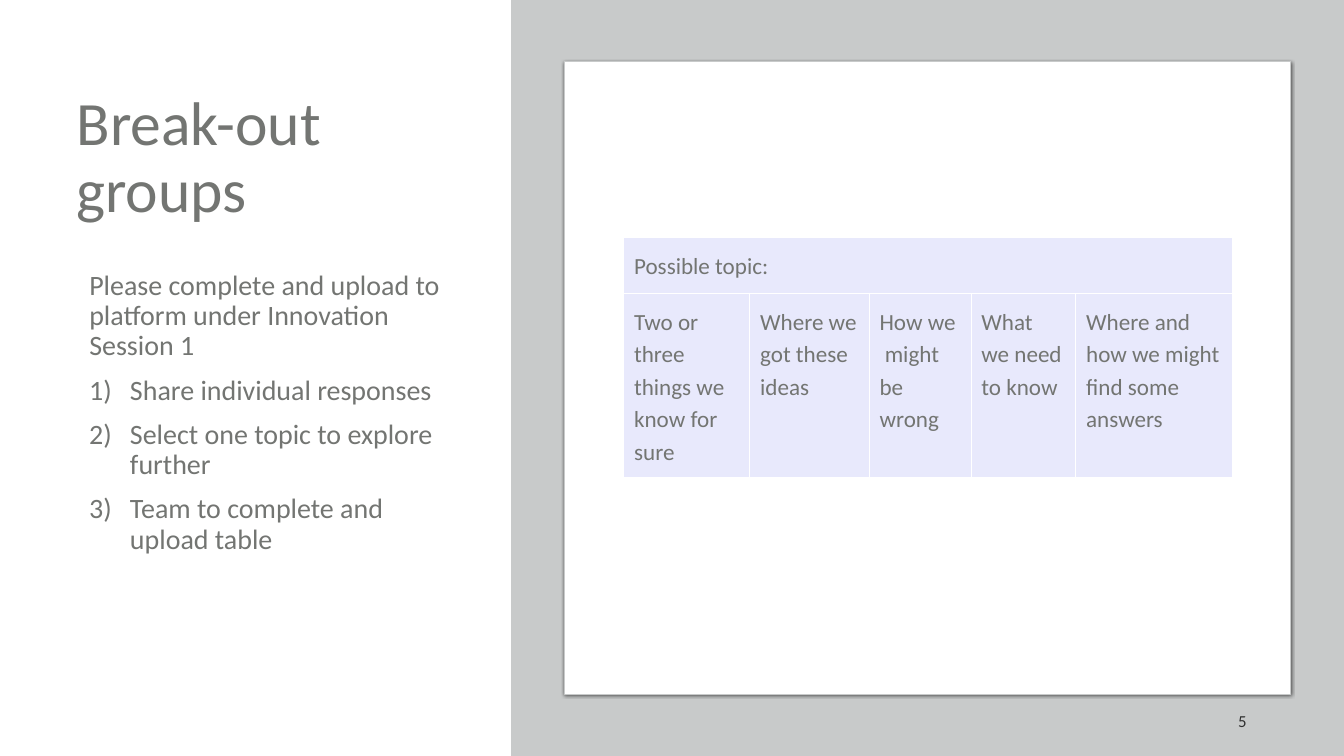
from lxml import etree
from pptx import Presentation
from pptx.dml.color import RGBColor
from pptx.enum.shapes import MSO_SHAPE as Shape
from pptx.enum.text import MSO_ANCHOR as Anchor, PP_ALIGN as Align
from pptx.oxml import parse_xml
from pptx.oxml.ns import nsdecls, qn
from pptx.util import Cm, Pt

FONT = "Calibri"
COLORS = {
    "text": "737572",
    "number": "303030",
    "panel": "C8CACA",
    "white": "FFFFFF",
    "cell": "E8E9FC",
    "shadow": "000000",
}
STEPS = [
    "Share individual responses",
    "Select one topic to explore further",
    "Team to complete and upload table",
]
COLUMNS = [
    ("Two or three things we know for sure", 6.35),
    ("Where we got these ideas", 6.02),
    ("How we  might be wrong", 5.13),
    ("What we need to know", 5.28),
    ("Where and how we might find some answers", 7.9),
]
ROW_HEIGHTS = [2.84, 9.27]


def rgb(name):
    return RGBColor.from_string(COLORS[name])


def add_run(paragraph, text, size, color="text"):
    run = paragraph.add_run()
    run.text = text
    run.font.name = FONT
    run.font.size = Pt(size)
    run.font.color.rgb = rgb(color)


def add_frame(slide, left, top, width, height, anchor=Anchor.TOP):
    frame = slide.shapes.add_textbox(Cm(left), Cm(top), Cm(width), Cm(height)).text_frame
    frame.word_wrap = True
    frame.vertical_anchor = anchor
    return frame


def indent(paragraph, margin, hanging):
    properties = paragraph._p.get_or_add_pPr()
    properties.set("marL", str(Cm(margin)))
    properties.set("indent", str(-Cm(hanging)))
    return properties


def add_instructions(slide, left, top, width):
    title = add_frame(slide, left, top, width, 9.02, Anchor.MIDDLE).paragraphs[0]
    title.line_spacing = 0.9
    add_run(title, "Break-out groups", 88)

    body = add_frame(slide, left, top + 10.03, width, 21.03)
    intro = body.paragraphs[0]
    indent(intro, 0.64, 0)
    add_run(intro, "Please complete and upload to platform under Innovation Session 1", 40)
    for step in STEPS:
        paragraph = body.add_paragraph()
        properties = indent(paragraph, 2.69, 2.06)
        numbering = etree.SubElement(properties, qn("a:buAutoNum"))
        numbering.set("type", "arabicParenR")
        add_run(paragraph, step, 40)
    for paragraph in body.paragraphs:
        paragraph.line_spacing = 0.9
        paragraph.space_before = Pt(20)


def add_block(slide, kind, left, top, width, height, fill):
    block = slide.shapes.add_shape(kind, Cm(left), Cm(top), Cm(width), Cm(height))
    block.shadow.inherit = False
    block.fill.solid()
    block.fill.fore_color.rgb = rgb(fill)
    block.line.fill.background()
    return block


def add_panel(slide, left, top, width, height):
    add_block(slide, Shape.RECTANGLE, left, top, width, height, "panel")
    card = add_block(slide, Shape.ROUNDED_RECTANGLE, left + 2.69, top + 3.1, 36.58, 31.88, "white")
    card.adjustments[0] = 0
    card.line.color.rgb = rgb("panel")
    card.line.width = Pt(0.75)
    effects = card._element.spPr.find(qn("a:effectLst"))
    effects.append(parse_xml(
        f'<a:outerShdw {nsdecls("a")} blurRad="{Pt(4.5)}" dist="{Pt(1.5)}" dir="5400000">'
        f'<a:srgbClr val="{COLORS["shadow"]}"><a:alpha val="63000"/></a:srgbClr></a:outerShdw>'
    ))
    number = add_frame(slide, left + 22.07, top + 35.31, 15.24, 2.03, Anchor.MIDDLE).paragraphs[0]
    number.alignment = Align.RIGHT
    number.space_after = Pt(6)
    add_run(number, "5", 24, "number")


def style_cell(cell):
    cell.margin_left = cell.margin_right = cell.margin_top = cell.margin_bottom = Cm(0.53)
    cell.fill.solid()
    cell.fill.fore_color.rgb = rgb("cell")
    properties = cell._tc.get_or_add_tcPr()
    for position, side in enumerate(("lnL", "lnR", "lnT", "lnB")):
        properties.insert(position, parse_xml(
            f'<a:{side} {nsdecls("a")} w="{Pt(1)}"><a:solidFill>'
            f'<a:srgbClr val="{COLORS["white"]}"/></a:solidFill></a:{side}>'
        ))


def fill_cell(cell, text):
    paragraph = cell.text_frame.paragraphs[0]
    paragraph.line_spacing = 1.15
    paragraph.space_before = paragraph.space_after = Pt(12)
    add_run(paragraph, text, 33)


def add_topic_table(slide, left, top):
    width = sum(column_width for _, column_width in COLUMNS)
    table = slide.shapes.add_table(
        len(ROW_HEIGHTS), len(COLUMNS), Cm(left), Cm(top), Cm(width), Cm(sum(ROW_HEIGHTS))
    ).table
    table.first_row = table.horz_banding = False
    for row, height in zip(table.rows, ROW_HEIGHTS):
        row.height = Cm(height)
    for cell in table.iter_cells():
        style_cell(cell)
    table.cell(0, 0).merge(table.cell(0, len(COLUMNS) - 1))
    fill_cell(table.cell(0, 0), "Possible topic:")
    for index, (heading, column_width) in enumerate(COLUMNS):
        table.columns[index].width = Cm(column_width)
        fill_cell(table.cell(1, index), heading)


def main():
    presentation = Presentation()
    presentation.slide_width = Cm(67.72)
    presentation.slide_height = Cm(38.1)
    slide = presentation.slides.add_slide(presentation.slide_layouts[6])
    slide.background.fill.solid()
    slide.background.fill.fore_color.rgb = rgb("white")
    add_instructions(slide, 3.61, 3.51, 19.48)
    add_panel(slide, 25.76, 0, 41.96, 38.1)
    add_topic_table(slide, 31.42, 11.96)
    presentation.save("out.pptx")


if __name__ == "__main__":
    main()
